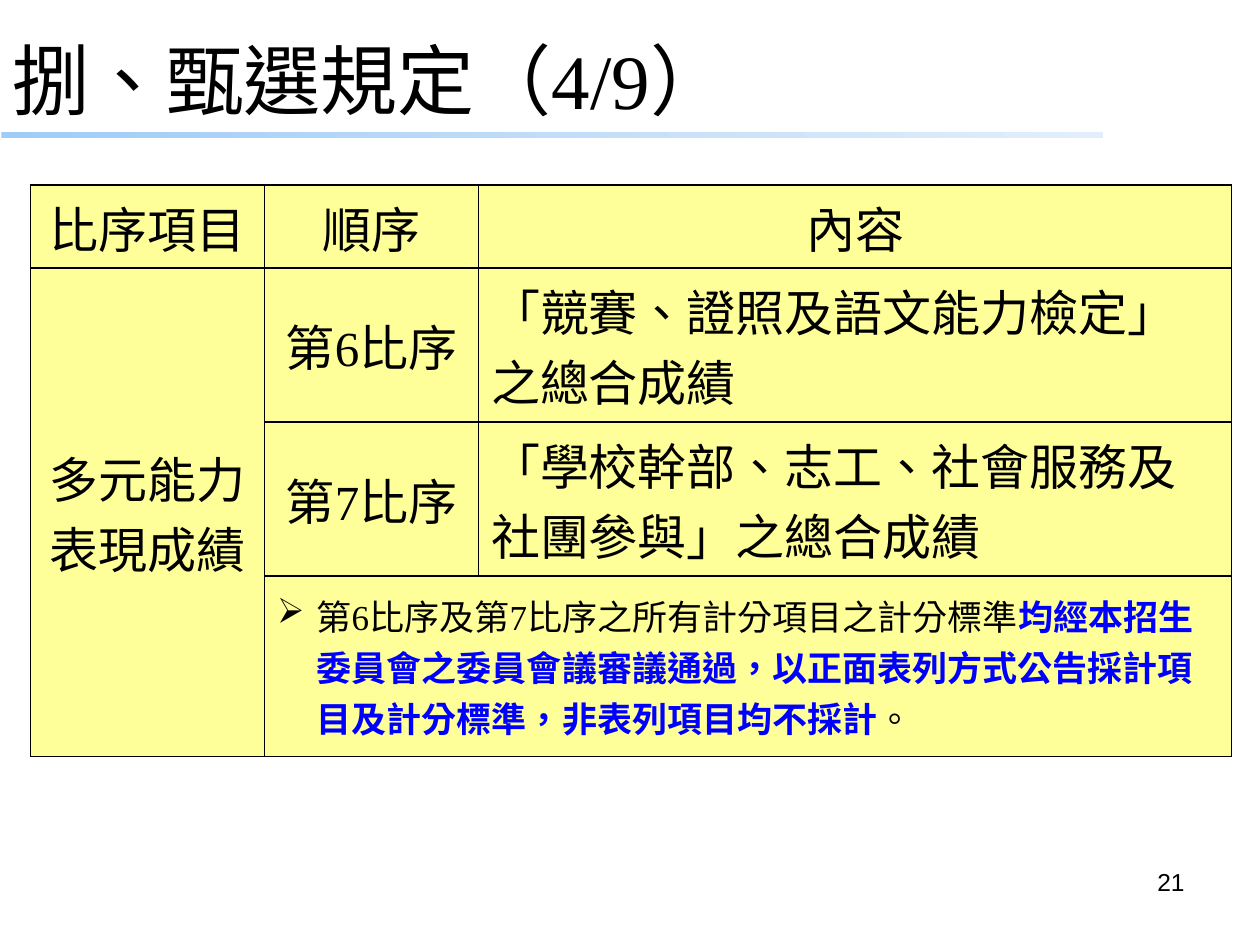
from lxml import etree
from pptx import Presentation
from pptx.dml.color import RGBColor
from pptx.enum.lang import MSO_LANGUAGE_ID
from pptx.enum.shapes import MSO_SHAPE
from pptx.enum.text import MSO_ANCHOR, PP_ALIGN
from pptx.oxml.ns import qn
from pptx.util import Pt

RECTANGLE = MSO_SHAPE.RECTANGLE
MIDDLE, TOP = MSO_ANCHOR.MIDDLE, MSO_ANCHOR.TOP
LEFT, CENTER, RIGHT = PP_ALIGN.LEFT, PP_ALIGN.CENTER, PP_ALIGN.RIGHT
CHINESE = MSO_LANGUAGE_ID.TRADITIONAL_CHINESE

COLORS = {
    "text": "000000",
    "emphasis": "0000FF",
    "border": "000000",
    "cell": "FFFF99",
    "bar_start": "9FCCF6",
    "bar_end": "E2EEFB",
}
SERIF, SANS, SYMBOLS = "Times New Roman", "Arial", "Wingdings"

COLUMN_WIDTHS = [133.75, 122.25, 430.25]
ROW_HEIGHTS = [47.5, 88, 88, 103]
TABLE_TEXTS = {
    (0, 0): ("比序項目", CENTER),
    (0, 1): ("順序", CENTER),
    (0, 2): ("內容", CENTER),
    (1, 0): ("多元能力表現成績", CENTER),
    (1, 1): ("第6比序", CENTER),
    (1, 2): ("「競賽、證照及語文能力檢定」之總合成績", LEFT),
    (2, 1): ("第7比序", CENTER),
    (2, 2): ("「學校幹部、志工、社會服務及社團參與」之總合成績", LEFT),
}
NOTE_RUNS = [
    ("第6比序及第7比序之所有計分項目之計分標準", "text", False),
    ("均經本招生委員會之委員會議審議通過，以正面表列方式公告採計項目及計分標準，非表列項目均不採計", "emphasis", True),
    ("。", "text", False),
]


def rgb(name):
    return RGBColor.from_string(COLORS[name])


def add_run(paragraph, text, size, font_name=SERIF, color="text", bold=False):
    run = paragraph.add_run()
    run.text = text
    run.font.language_id = CHINESE
    run.font.name = font_name
    run.font.size = Pt(size)
    run.font.bold = bold
    run.font.color.rgb = rgb(color)


def add_text(slide, box, text, size, font_name, alignment, anchor):
    text_frame = slide.shapes.add_textbox(*map(Pt, box)).text_frame
    text_frame.word_wrap = True
    text_frame.vertical_anchor = anchor
    paragraph = text_frame.paragraphs[0]
    paragraph.alignment = alignment
    add_run(paragraph, text, size, font_name)


def add_title_bar(slide, box):
    bar = slide.shapes.add_shape(RECTANGLE, *map(Pt, box))
    bar.shadow.inherit = False
    bar.line.fill.background()
    bar.fill.gradient()
    bar.fill.gradient_angle = 45
    for stop, color in zip(bar.fill.gradient_stops, ("bar_start", "bar_end")):
        stop.color.rgb = rgb(color)


def style_cell(cell):
    properties = cell._tc.get_or_add_tcPr()
    for side in ("lnL", "lnR", "lnT", "lnB"):
        line = etree.SubElement(properties, qn(f"a:{side}"), w=str(Pt(1)))
        fill = etree.SubElement(line, qn("a:solidFill"))
        etree.SubElement(fill, qn("a:srgbClr"), val=COLORS["border"])
    cell.fill.solid()
    cell.fill.fore_color.rgb = rgb("cell")
    cell.vertical_anchor = MIDDLE


def add_note(paragraph):
    properties = paragraph._p.get_or_add_pPr()
    properties.set("marL", str(Pt(22.5)))
    properties.set("indent", str(-Pt(22.5)))
    etree.SubElement(properties, qn("a:buFont"), typeface=SYMBOLS, charset="2")
    etree.SubElement(properties, qn("a:buChar"), char="Ø")
    for text, color, bold in NOTE_RUNS:
        add_run(paragraph, text, 20, color=color, bold=bold)


def add_ranking_table(slide, left, top):
    table = slide.shapes.add_table(
        len(ROW_HEIGHTS), len(COLUMN_WIDTHS), Pt(left), Pt(top),
        Pt(sum(COLUMN_WIDTHS)), Pt(sum(ROW_HEIGHTS)),
    ).table
    for column, width in zip(table.columns, COLUMN_WIDTHS):
        column.width = Pt(width)
    for row, height in zip(table.rows, ROW_HEIGHTS):
        row.height = Pt(height)
    for cell in table.iter_cells():
        style_cell(cell)
    table.cell(1, 0).merge(table.cell(3, 0))
    table.cell(3, 1).merge(table.cell(3, 2))
    for position, (text, alignment) in TABLE_TEXTS.items():
        paragraph = table.cell(*position).text_frame.paragraphs[0]
        paragraph.alignment = alignment
        add_run(paragraph, text, 28)
    add_note(table.cell(3, 1).text_frame.paragraphs[0])


def main():
    presentation = Presentation()
    presentation.slide_width = Pt(720)
    presentation.slide_height = Pt(540)
    slide = presentation.slides.add_slide(presentation.slide_layouts[6])
    add_title_bar(slide, (0.75, 75.75, 629.5, 3))
    add_text(slide, (0, 20.25, 648, 50), "捌、甄選規定（4/9）", 44, SERIF, LEFT, MIDDLE)
    add_text(slide, (516, 492, 168, 37.5), "21", 14, SANS, RIGHT, TOP)
    add_ranking_table(slide, 17.5, 105.75)
    presentation.save("out.pptx")


if __name__ == "__main__":
    main()
